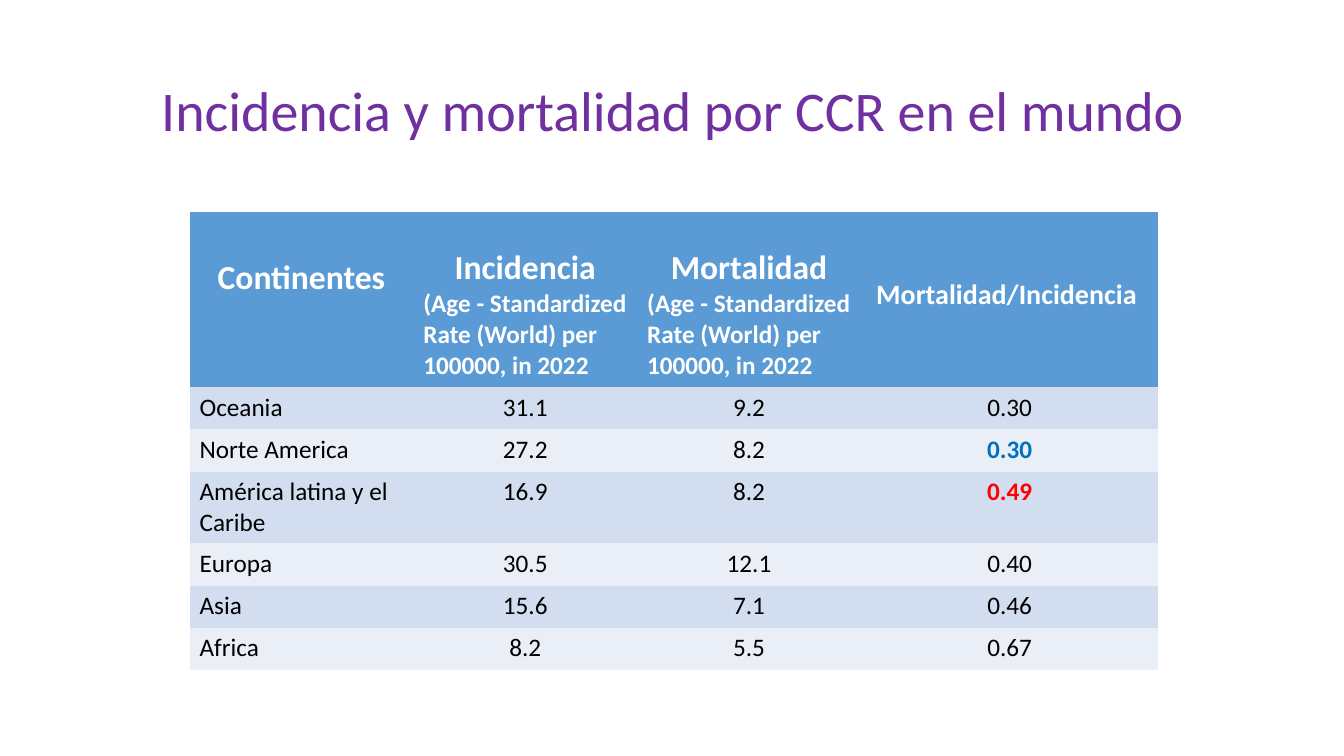
from dataclasses import dataclass

from pptx import Presentation
from pptx.dml.color import RGBColor
from pptx.enum.text import MSO_ANCHOR, MSO_AUTO_SIZE, PP_ALIGN
from pptx.oxml.ns import qn
from pptx.slide import Slide
from pptx.table import _Cell as Cell
from pptx.text.text import TextFrame
from pptx.util import Inches, Pt

LEFT, CENTER = PP_ALIGN.LEFT, PP_ALIGN.CENTER
MIDDLE = MSO_ANCHOR.MIDDLE
FIXED = MSO_AUTO_SIZE.NONE
PLAIN = "{2D5ABB26-0587-4C30-8999-92F81FD0307C}"


@dataclass(frozen=True)
class Theme:
    font: str = "Calibri"
    title: str = "7030A0"
    head: str = "5B9BD5"
    bands: tuple[str, str] = ("D2DEEF", "EAEFF7")
    white: str = "FFFFFF"
    black: str = "000000"
    blue: str = "0070C0"
    red: str = "FF0000"
    title_size: int = 40
    head_size: int = 24
    ratio_size: int = 20
    body_size: int = 18


THEME = Theme()


@dataclass(frozen=True)
class Line:
    text: str
    size: int = THEME.body_size
    color: str = THEME.black
    bold: bool = False
    align: PP_ALIGN = CENTER


@dataclass(frozen=True)
class Head:
    lines: tuple[Line, ...]
    top: float


@dataclass(frozen=True)
class Region:
    name: str
    cases: str
    deaths: str
    ratio: str
    accent: str = ""


def label(text: str, size: int) -> Line:
    return Line(text, size, THEME.white, True)


RATE = Line("(Age - Standardized Rate (World) per 100000, in 2022",
            color=THEME.white, bold=True, align=LEFT)
HEADS = (
    Head((label("Continentes", THEME.head_size),), 0.46),
    Head((label("Incidencia", THEME.head_size), RATE), 0.36),
    Head((label("Mortalidad", THEME.head_size), RATE), 0.36),
    Head((label("Mortalidad/Incidencia ", THEME.ratio_size),), 0.66),
)
REGIONS = (
    Region("Oceania", "31.1", "9.2", "0.30"),
    Region("Norte America", "27.2", "8.2", "0.30", THEME.blue),
    Region("América latina y el Caribe", "16.9", "8.2", "0.49", THEME.red),
    Region("Europa", "30.5", "12.1", "0.40"),
    Region("Asia", "15.6", "7.1", "0.46"),
    Region("Africa", "8.2", "5.5", "0.67"),
)
WIDTHS = (2.22, 2.22, 2.22, 2.95)
HEIGHTS = (1.74, 0.42, 0.42, 0.65, 0.42, 0.42, 0.42)


def write(frame: TextFrame, lines: tuple[Line, ...]) -> None:
    for index, line in enumerate(lines):
        para = frame.add_paragraph() if index else frame.paragraphs[0]
        para.alignment = line.align
        run = para.add_run()
        run.text = line.text
        font = run.font
        font.name = THEME.font
        font.size = Pt(line.size)
        font.bold = line.bold
        font.color.rgb = RGBColor.from_string(line.color)


def paint(cell: Cell, fill: str, lines: tuple[Line, ...]) -> None:
    cell.fill.solid()
    cell.fill.fore_color.rgb = RGBColor.from_string(fill)
    write(cell.text_frame, lines)


def add_title(slide: Slide) -> None:
    title = slide.shapes.title
    title.left, title.top = Inches(0.92), Inches(0.4)
    title.width, title.height = Inches(11.5), Inches(1.45)
    frame = title.text_frame
    frame.word_wrap = True
    frame.auto_size = FIXED
    frame.vertical_anchor = MIDDLE
    write(frame, (Line("Incidencia y mortalidad por CCR en el mundo",
                       THEME.title_size, THEME.title),))
    frame.paragraphs[0].line_spacing = 0.9


def add_rates(slide: Slide) -> None:
    shape = slide.shapes.add_table(
        len(HEIGHTS), len(WIDTHS), Inches(1.88), Inches(2.1),
        Inches(sum(WIDTHS)), Inches(sum(HEIGHTS)))
    for style in shape.element.iter(qn("a:tableStyleId")):
        style.text = PLAIN
    table = shape.table
    for column, width in zip(table.columns, WIDTHS):
        column.width = Inches(width)
    for row, height in zip(table.rows, HEIGHTS):
        row.height = Inches(height)
    for col, head in enumerate(HEADS):
        cell = table.cell(0, col)
        cell.margin_top = Inches(head.top)
        paint(cell, THEME.head, head.lines)
    for index, region in enumerate(REGIONS):
        lines = (
            Line(region.name, align=LEFT),
            Line(region.cases),
            Line(region.deaths),
            Line(region.ratio, color=region.accent or THEME.black,
                 bold=bool(region.accent)),
        )
        for col, line in enumerate(lines):
            paint(table.cell(index + 1, col), THEME.bands[index % 2], (line,))


def main() -> None:
    deck = Presentation()
    deck.slide_width, deck.slide_height = Inches(13.33), Inches(7.5)
    slide = deck.slides.add_slide(deck.slide_layouts[5])
    add_title(slide)
    add_rates(slide)
    deck.save("out.pptx")


if __name__ == "__main__":
    main()
